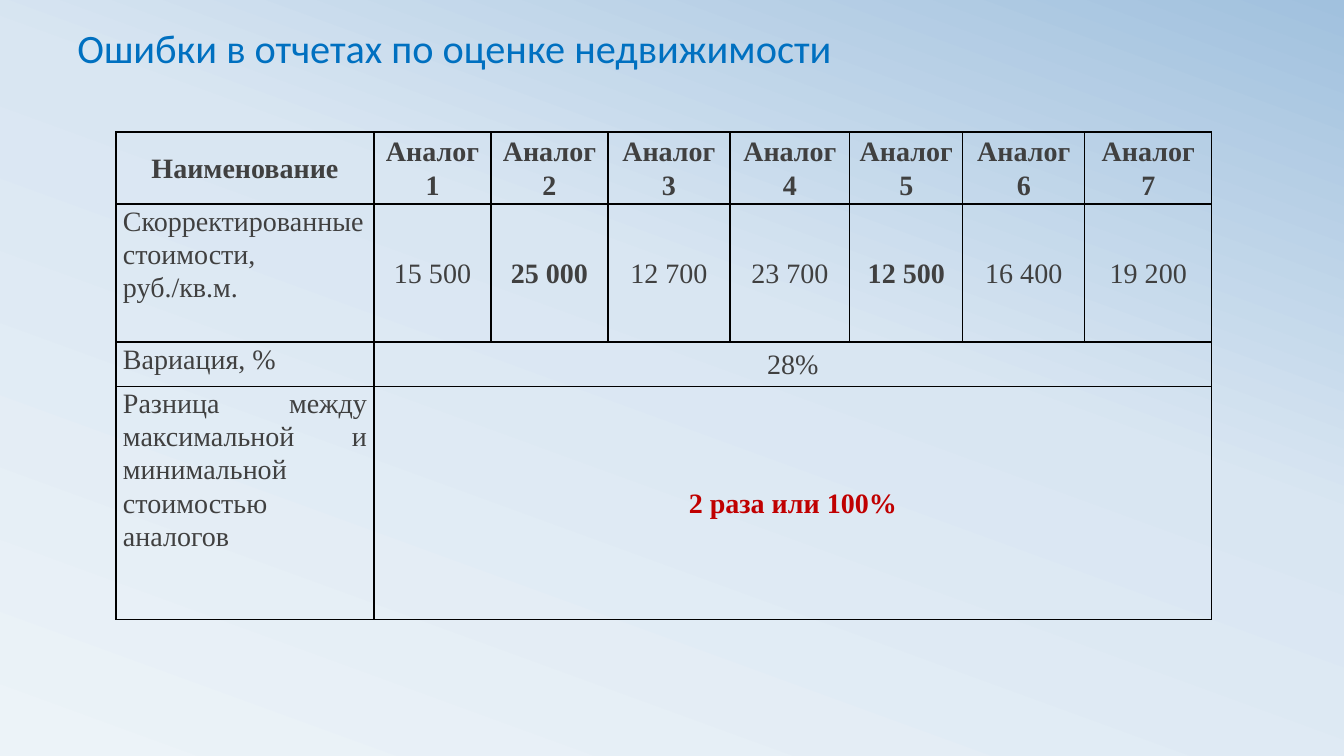
from copy import deepcopy

from lxml import etree
from pptx import Presentation
from pptx.dml import color
from pptx.enum import text
from pptx.oxml import ns
from pptx.util import Inches, Pt

ALIGN = text.PP_ALIGN
ANCHOR = text.MSO_ANCHOR
WIDTHS = [2.56, 1.16, 1.16, 1.21, 1.19, 1.12, 1.21, 1.26]
HEIGHTS = [0.66, 1.37, 0.44, 2.31]
ROWS = [
    ["Наименование"] + [f"Аналог {n}" for n in range(1, 8)],
    ["Скорректированные стоимости, руб./кв.м.", "15 500", "25 000",
     "12 700", "23 700", "12 500", "16 400", "19 200"],
    ["Вариация, %", "28%"],
    ["Разница между максимальной и минимальной стоимостью аналогов",
     "2 раза или 100%"],
]
BOLD = {"25 000", "12 500", "2 раза или 100%"}


def rgb(code):
    return color.RGBColor.from_string(code)


def apply(item, props):
    for name, value in props.items():
        setattr(item, name, value)


def write(frame, words, para, font, ink):
    line = frame.paragraphs[0]
    apply(line, para)
    run = line.add_run()
    run.text = words
    apply(run.font, font)
    run.font.color.rgb = rgb(ink)


def paint(slide, stops, angle):
    fill = slide.background.fill
    fill.gradient()
    fill.gradient_angle = angle
    first = next(slide.element.iter(ns.qn("a:gs")))
    first.addnext(deepcopy(first))
    for stop, (place, code) in zip(fill.gradient_stops, stops):
        stop.position = place
        stop.color.rgb = rgb(code)


def border(cell):
    props = cell._tc.get_or_add_tcPr()
    for side in ("lnL", "lnR", "lnT", "lnB"):
        line = etree.SubElement(props, ns.qn(f"a:{side}"), w=str(Pt(1)))
        fill = etree.SubElement(line, ns.qn("a:solidFill"))
        etree.SubElement(fill, ns.qn("a:srgbClr"), val="000000")


def title(slide, words):
    box = slide.shapes.add_textbox(
        Inches(0.67), Inches(0.23), Inches(12), Inches(0.54))
    frame = box.text_frame
    apply(frame, {"word_wrap": True, "vertical_anchor": ANCHOR.MIDDLE})
    write(frame, words, {"line_spacing": 0.9},
          {"name": "Calibri", "size": Pt(28.8)}, "0070C0")


def style(cell):
    border(cell)
    cell.fill.background()
    apply(cell, {"margin_left": Inches(0.07), "margin_right": Inches(0.07),
                 "margin_top": 0, "margin_bottom": 0})


def fill_cell(cell, words, head, label):
    cell.vertical_anchor = ANCHOR.TOP if label else ANCHOR.MIDDLE
    para = {"alignment": ALIGN.JUSTIFY if label else ALIGN.CENTER,
            "line_spacing": 1.07, "space_after": Pt(8)}
    font = {"name": "Times New Roman", "size": Pt(20),
            "bold": head or words in BOLD}
    ink = "C00000" if words == ROWS[-1][1] else "404040"
    write(cell.text_frame, words, para, font, ink)


def grid(slide):
    table = slide.shapes.add_table(
        len(ROWS), len(WIDTHS), Inches(1.15), Inches(1.31),
        Inches(sum(WIDTHS)), Inches(sum(HEIGHTS))).table
    apply(table, {"first_row": False, "horz_banding": False})
    for col, width in zip(table.columns, WIDTHS):
        col.width = Inches(width)
    for row, height in zip(table.rows, HEIGHTS):
        row.height = Inches(height)
    for cell in table.iter_cells():
        style(cell)
    for r, row in enumerate(ROWS):
        if len(row) == 2:
            table.cell(r, 1).merge(table.cell(r, len(WIDTHS) - 1))
        for c, words in enumerate(row):
            fill_cell(table.cell(r, c), words, r == 0, r > 0 and c == 0)


def main():
    deck = Presentation()
    apply(deck, {"slide_width": Inches(13.33), "slide_height": Inches(7.5)})
    slide = deck.slides.add_slide(deck.slide_layouts[6])
    paint(slide, [(0, "ECF3F8"), (0.58, "D9E6F2"), (1, "A1C1DE")], 70)
    title(slide, "Ошибки в отчетах по оценке недвижимости")
    grid(slide)
    deck.save("out.pptx")


if __name__ == "__main__":
    main()
